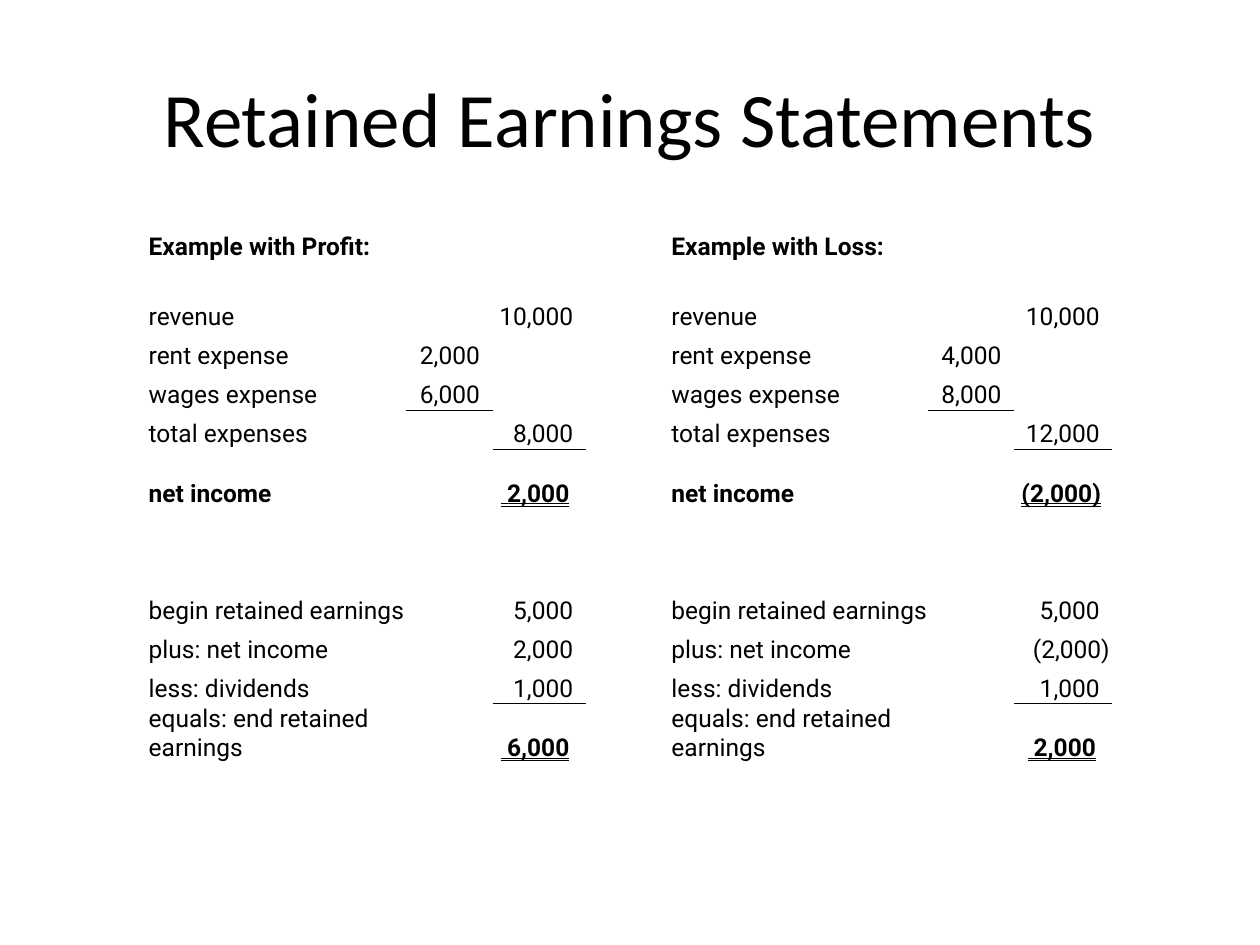
from lxml.etree import SubElement
from pptx import Presentation
from pptx.dml.color import RGBColor
from pptx.enum.text import MSO_ANCHOR, MSO_UNDERLINE, PP_ALIGN
from pptx.oxml.ns import qn
from pptx.util import Inches, Pt

COLORS = {"text": "000000", "rule": "000000"}
TITLE = "Retained Earnings Statements"
NO_STYLE = "{2D5ABB26-0587-4C30-8999-92F81FD0307C}"

# Row, label, amount column (1 inner, 2 outer), profit and loss amounts, look
LINES = [
    (2, "revenue", 2, "10,000", "10,000", "plain"),
    (3, "rent expense", 1, "2,000", "4,000", "plain"),
    (4, "wages expense", 1, "6,000", "8,000", "ruled"),
    (5, "total expenses", 2, "8,000", "12,000", "ruled"),
    (6, "net income", 2, "2,000", "(2,000)", "total"),
    (9, "begin retained earnings", 2, "5,000", "5,000", "plain"),
    (10, "plus: net income", 2, "2,000", "(2,000)", "plain"),
    (11, "less: dividends", 2, "1,000", "1,000", "ruled"),
    (12, "equals: end retained earnings", 2, "6,000", "2,000", "total"),
]
HEADINGS = ["Example with Profit:", "Example with Loss:"]
BLOCK_STARTS = [0, 4]
COLUMN_WIDTHS = [2.05, 0.69, 0.74, 0.67, 2.05, 0.68, 0.78]
ROW_HEIGHTS = [0.24, 0.24] + [0.31] * 10 + [0.47]


def format_text(paragraph, size, font, bold=False):
    for span in paragraph.runs:
        span.font.size = Pt(size)
        span.font.name = font
        span.font.bold = bold
        span.font.color.rgb = RGBColor.from_string(COLORS["text"])


def write(cell, text, bold=False):
    cell.text_frame.text = text
    format_text(cell.text_frame.paragraphs[0], 14, "Roboto", bold)


def rule_below(cell):
    properties = cell._tc.get_or_add_tcPr()
    line = SubElement(properties, qn("a:lnB"), w=str(Pt(0.5)))
    properties.insert(0, line)
    fill = SubElement(line, qn("a:solidFill"))
    SubElement(fill, qn("a:srgbClr"), val=COLORS["rule"])


def write_amount(cell, amount, look):
    total = look == "total"
    # A leading space widens the double underline of a total
    write(cell, f" {amount}" if total else amount, total)
    paragraph = cell.text_frame.paragraphs[0]
    paragraph.alignment = PP_ALIGN.RIGHT
    negative = amount.startswith("(")
    if total:
        paragraph.runs[0].font.underline = MSO_UNDERLINE.DOUBLE_LINE
        cell.margin_right = Inches(0.09 if negative else 0.13)
    else:
        cell.margin_right = Inches(0.02 if negative else 0.1)
    if look == "ruled":
        rule_below(cell)


deck = Presentation()
deck.slide_width, deck.slide_height = Inches(10), Inches(7.5)
page = deck.slides.add_slide(deck.slide_layouts[5])

# Title
title = page.shapes.title
title.left, title.top = Inches(0.5), Inches(0.3)
title.width, title.height = Inches(9), Inches(1.25)
title.text_frame.text = TITLE
title.text_frame.vertical_anchor = MSO_ANCHOR.MIDDLE
title.text_frame.paragraphs[0].alignment = PP_ALIGN.CENTER
format_text(title.text_frame.paragraphs[0], 44, "Calibri")

# Empty table grid
frame = page.shapes.add_table(
    len(ROW_HEIGHTS), len(COLUMN_WIDTHS), Inches(1.17), Inches(1.83),
    Inches(sum(COLUMN_WIDTHS)), Inches(sum(ROW_HEIGHTS)))
table = frame.table
table.first_row = table.horz_banding = False
table._tbl.tblPr.find(qn("a:tableStyleId")).text = NO_STYLE
for column, width in zip(table.columns, COLUMN_WIDTHS):
    column.width = Inches(width)
for row, height in zip(table.rows, ROW_HEIGHTS):
    row.height = Inches(height)
for cell in table.iter_cells():
    cell.fill.background()
    cell.vertical_anchor = MSO_ANCHOR.BOTTOM
    cell.margin_left = cell.margin_right = cell.margin_top = Inches(0.01)
    cell.margin_bottom = 0
    # Keeps empty cells from stretching their rows
    end = SubElement(cell.text_frame.paragraphs[0]._p, qn("a:endParaRPr"))
    end.set("sz", "1400")

# Profit and loss statements
for block, (start, heading) in enumerate(zip(BLOCK_STARTS, HEADINGS)):
    write(table.cell(0, start), heading, bold=True)
    for row, label, offset, *amounts, look in LINES:
        write(table.cell(row, start), label, bold=label == "net income")
        write_amount(table.cell(row, start + offset), amounts[block], look)

deck.save("out.pptx")
